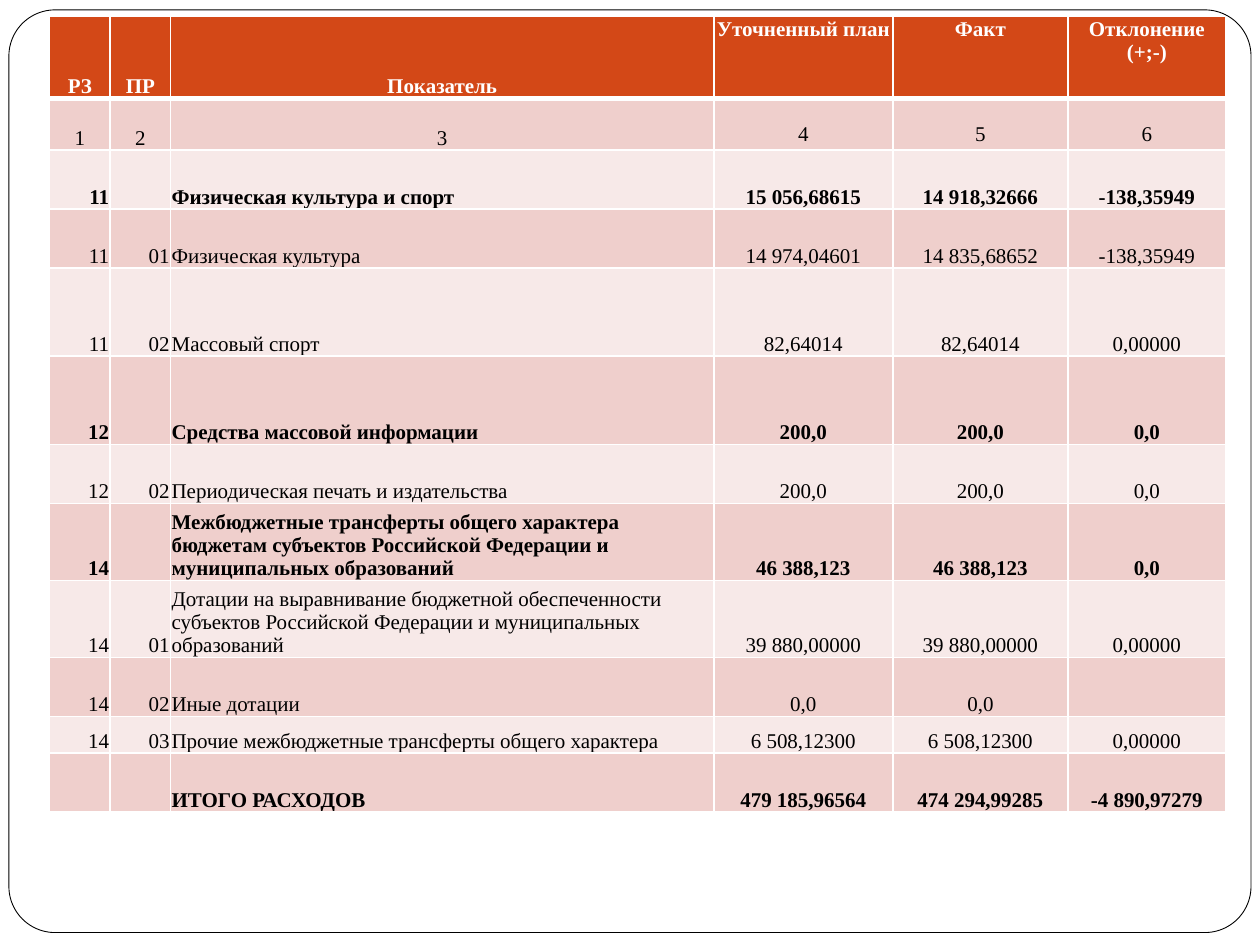
import pptx
import pptx.util
import pptx.dml.color
import pptx.enum.shapes
import pptx.enum.text
import pptx.oxml
import pptx.oxml.ns

Cm, Pt = pptx.util.Cm, pptx.util.Pt
RGB = pptx.dml.color.RGBColor
ALIGN = pptx.enum.text.PP_ALIGN
ANCHOR = pptx.enum.text.MSO_ANCHOR

# Content: row height in cm, then the cells
ROWS = [
    (1.65, "РЗ", "ПР", "Показатель", "Уточненный план", "Факт", "Отклонение (+;-)"),
    (1.04, "1", "2", "3", "4", "5", "6"),
    (1.19, "11", "", "Физическая культура и спорт",
     "15 056,68615", "14 918,32666", "-138,35949"),
    (1.19, "11", "01", "Физическая культура",
     "14 974,04601", "14 835,68652", "-138,35949"),
    (1.78, "11", "02", "Массовый спорт", "82,64014", "82,64014", "0,00000"),
    (1.78, "12", "", "Средства массовой информации", "200,0", "200,0", "0,0"),
    (1.19, "12", "02", "Периодическая печать и издательства", "200,0", "200,0", "0,0"),
    (1.55, "14", "", "Межбюджетные трансферты общего характера бюджетам "
     "субъектов Российской Федерации и муниципальных образований",
     "46 388,123", "46 388,123", "0,0"),
    (1.55, "14", "01", "Дотации на выравнивание бюджетной обеспеченности "
     "субъектов Российской Федерации и муниципальных образований",
     "39 880,00000", "39 880,00000", "0,00000"),
    (1.19, "14", "02", "Иные дотации", "0,0", "0,0", ""),
    (0.74, "14", "03", "Прочие межбюджетные трансферты общего характера",
     "6 508,12300", "6 508,12300", "0,00000"),
    (1.19, "", "", "ИТОГО РАСХОДОВ", "479 185,96564", "474 294,99285", "-4 890,97279"),
]
COLS = [1.22, 1.22, 10.95, 3.61, 3.53, 3.18]
SIDES = [ALIGN.RIGHT, ALIGN.RIGHT, ALIGN.LEFT] + [ALIGN.CENTER] * 3
COLORS = {"head": "D34817", "odd": "EFCFCC", "even": "F7E9E8",
          "white": "FFFFFF", "black": "000000"}
FONT = "Times New Roman"


def color(name):
    return RGB.from_string(COLORS[name])


def edge(cell, side, width):
    cell._tc.get_or_add_tcPr().append(pptx.oxml.parse_xml(
        f'<a:ln{side} {pptx.oxml.ns.nsdecls("a")} w="{Pt(width)}"><a:solidFill>'
        f'<a:srgbClr val="{COLORS["white"]}"/></a:solidFill></a:ln{side}>'))


def style(cell, row, col, text, bold):
    head = row == 0
    cell.margin_left = cell.margin_right = cell.margin_top = Cm(0.02)
    cell.margin_bottom = 0
    top = row < 2 and col > 2
    cell.vertical_anchor = ANCHOR.TOP if top else ANCHOR.BOTTOM
    if top and not head:
        cell.margin_top = Cm(0.49)
    # Borders go before the fill
    thick = {"T": row == 1, "B": head}
    for side in "LRTB":
        edge(cell, side, 3 if thick.get(side) else 1)
    cell.fill.solid()
    cell.fill.fore_color.rgb = color("head" if head else "odd" if row % 2 else "even")
    if not text:
        return
    para = cell.text_frame.paragraphs[0]
    para.alignment = ALIGN.CENTER if row < 2 else SIDES[col]
    run = para.add_run()
    run.text = text
    font = run.font
    font.name, font.size, font.bold = FONT, Pt(12), bold
    font.color.rgb = color("white" if head else "black")


def main():
    deck = pptx.Presentation()
    deck.slide_width, deck.slide_height = Cm(25.4), Cm(19.05)
    slide = deck.slides.add_slide(deck.slide_layouts[6])

    # Rounded frame
    frame = slide.shapes.add_shape(
        pptx.enum.shapes.MSO_SHAPE.ROUNDED_RECTANGLE,
        Cm(0.18), Cm(0.2), Cm(25.04), Cm(18.6))
    frame.adjustments[0] = 0.05
    frame.shadow.inherit = False
    frame.fill.solid()
    frame.fill.fore_color.rgb = color("white")
    frame.line.color.rgb = color("black")
    frame.line.width = Pt(0.5)

    # Budget table
    table = slide.shapes.add_table(
        len(ROWS), len(COLS), Cm(1), Cm(0.33),
        Cm(sum(COLS)), Cm(sum(row[0] for row in ROWS))).table
    for col, width in enumerate(COLS):
        table.columns[col].width = Cm(width)
    for row, (high, *texts) in enumerate(ROWS):
        table.rows[row].height = Cm(high)
        bold = row == 0 or not texts[1]  # sections and the total have no subsection
        for col, text in enumerate(texts):
            style(table.cell(row, col), row, col, text, bold)

    deck.save("out.pptx")


if __name__ == "__main__":
    main()
